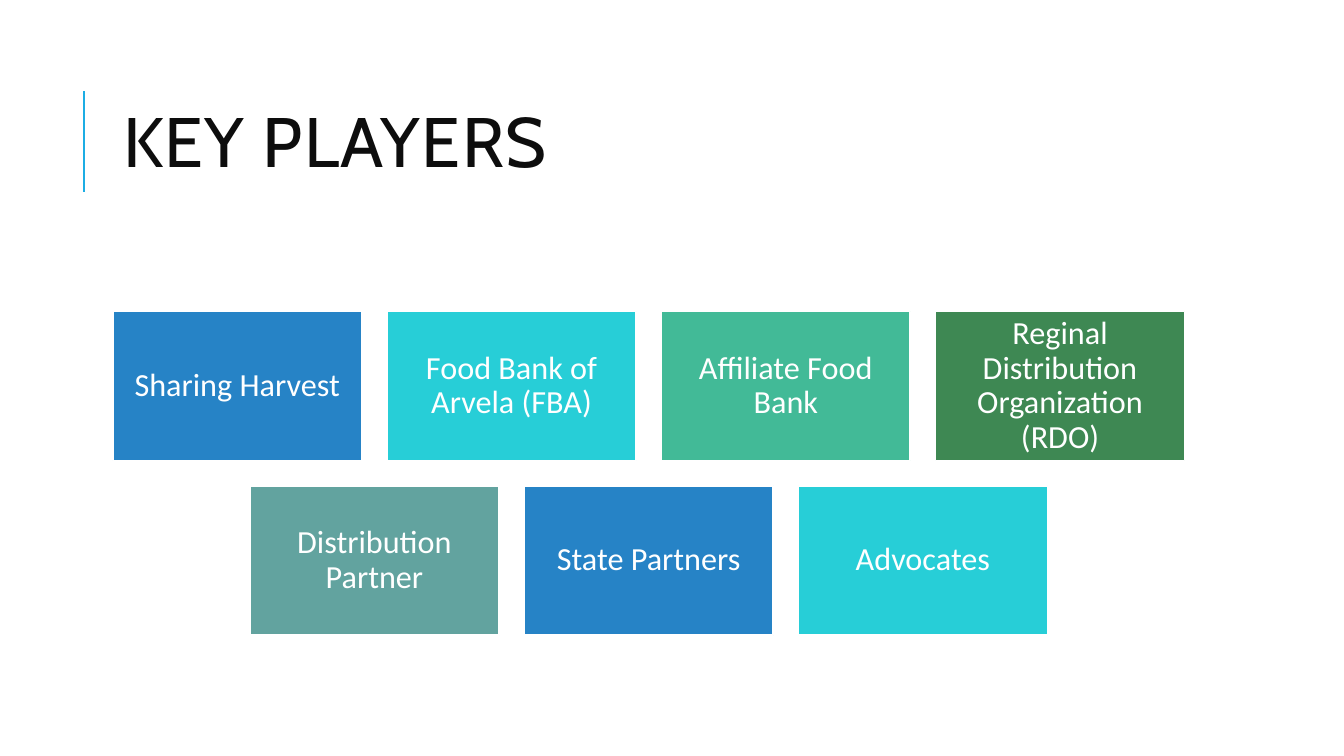
from pptx import Presentation
from pptx.dml.color import RGBColor
from pptx.enum.shapes import MSO_CONNECTOR, MSO_SHAPE
from pptx.enum.text import MSO_ANCHOR, MSO_AUTO_SIZE, PP_ALIGN
from pptx.oxml.ns import qn
from pptx.util import Inches, Pt
from lxml import etree

RECTANGLE = MSO_SHAPE.RECTANGLE
STRAIGHT = MSO_CONNECTOR.STRAIGHT
MIDDLE = MSO_ANCHOR.MIDDLE
LEFT, CENTER = PP_ALIGN.LEFT, PP_ALIGN.CENTER
NO_AUTOFIT = MSO_AUTO_SIZE.NONE
TITLE_ONLY = 5

COLORS = {
    "ink": "0D0D0D",
    "white": "FFFFFF",
    "accent": "1CADE4",
    "blue": "2683C6",
    "cyan": "27CED7",
    "mint": "42BA97",
    "green": "3E8853",
    "sage": "62A39F",
}

# Card grid, in inches
GRID_LEFT, GRID_TOP, GRID_WIDTH = 1.12, 3.09, 10.63
CARD_WIDTH, CARD_HEIGHT = 2.47, 1.48
COLUMN_STEP, ROW_STEP = 2.72, 1.73

PLAYER_ROWS = [
    [
        ("Sharing Harvest", "blue"),
        ("Food Bank of Arvela (FBA)", "cyan"),
        ("Affiliate Food Bank", "mint"),
        ("Reginal Distribution Organization (RDO)", "green"),
    ],
    [
        ("Distribution Partner", "sage"),
        ("State Partners", "blue"),
        ("Advocates", "cyan"),
    ],
]


def color(name):
    return RGBColor.from_string(COLORS[name])


def write_text(holder, text, *, size, font, ink, align, line_spacing, tracking=0):
    """Fill a shape or placeholder with one formatted paragraph."""
    frame = holder.text_frame
    frame.auto_size = NO_AUTOFIT
    frame.word_wrap = True
    frame.vertical_anchor = MIDDLE
    frame.margin_left = frame.margin_right = Inches(0.1)
    paragraph = frame.paragraphs[0]
    paragraph.alignment = align
    paragraph.line_spacing = line_spacing
    run = paragraph.add_run()
    run.text = text
    run.font.size = Pt(size)
    run.font.name = font
    run.font.color.rgb = color(ink)
    if tracking:
        run.font._element.set("spc", str(round(tracking * 100)))


def add_title(slide, text):
    title = slide.shapes.title
    title.left, title.top = Inches(GRID_LEFT), Inches(0.64)
    title.width, title.height = Inches(GRID_WIDTH), Inches(1.64)
    write_text(title, text, size=50, font="Cabin", ink="ink",
               align=LEFT, line_spacing=0.8, tracking=1)


def add_title_rule(slide):
    x = Inches(0.83)
    rule = slide.shapes.add_connector(STRAIGHT, x, Inches(1.9), x, Inches(0.9))
    rule.line.color.rgb = color("accent")
    rule.line.width = Pt(1.5)
    etree.SubElement(rule._element.spPr, qn("a:effectLst"))


def add_card(slide, left, top, text, fill):
    card = slide.shapes.add_shape(RECTANGLE, Inches(left), Inches(top),
                                  Inches(CARD_WIDTH), Inches(CARD_HEIGHT))
    card.shadow.inherit = False
    card.fill.solid()
    card.fill.fore_color.rgb = color(fill)
    card.line.color.rgb = color("white")
    card.line.width = Pt(1.25)
    write_text(card, text, size=23, font="Calibri", ink="white",
               align=CENTER, line_spacing=0.9)


def add_player_cards(slide):
    """Lay out the rows, each one centred on the grid."""
    for row, players in enumerate(PLAYER_ROWS):
        row_width = (len(players) - 1) * COLUMN_STEP + CARD_WIDTH
        row_left = GRID_LEFT + (GRID_WIDTH - row_width) / 2
        for column, (player, fill) in enumerate(players):
            add_card(slide, row_left + column * COLUMN_STEP,
                     GRID_TOP + row * ROW_STEP, player, fill)


def main():
    deck = Presentation()
    deck.slide_width, deck.slide_height = Inches(13.33), Inches(7.5)
    slide = deck.slides.add_slide(deck.slide_layouts[TITLE_ONLY])

    # Heading
    add_title_rule(slide)
    add_title(slide, "KEY PLAYERS")

    # Players
    add_player_cards(slide)

    deck.save("out.pptx")


if __name__ == "__main__":
    main()
